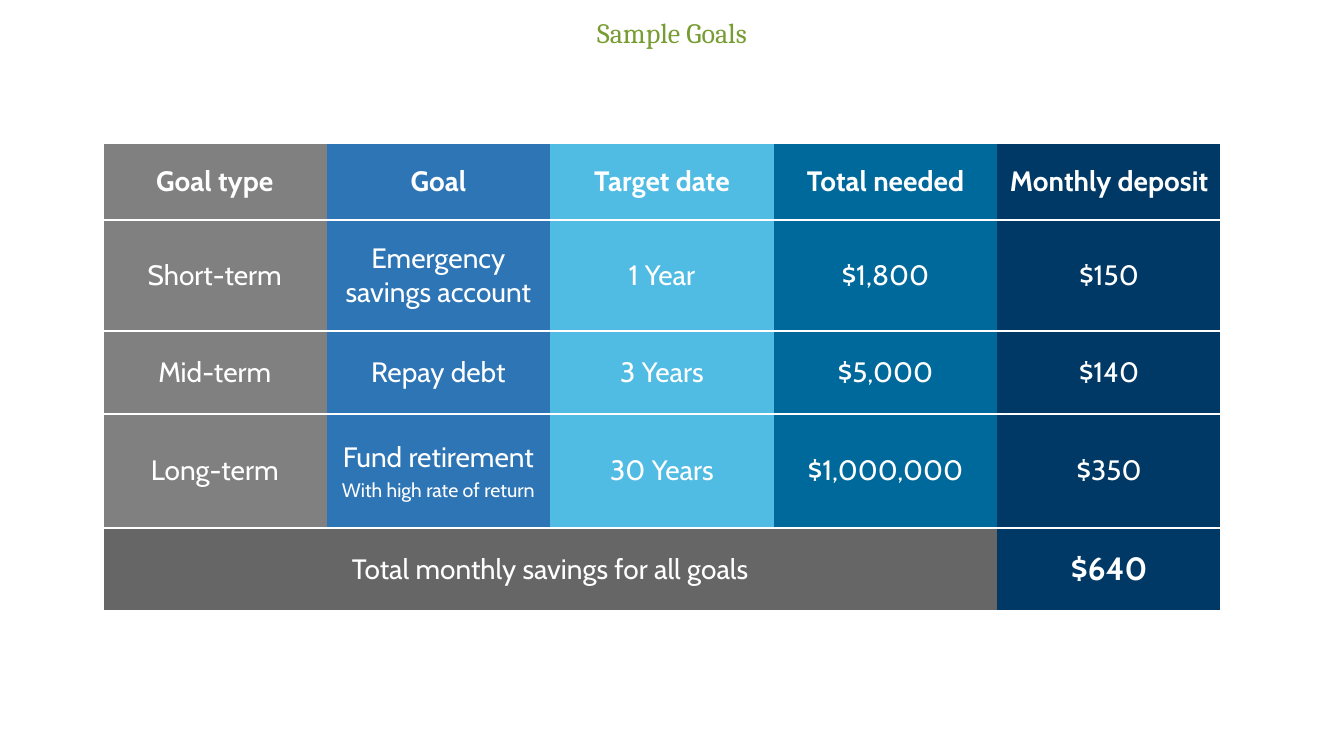
import lxml.etree
import pptx
import pptx.dml.color
import pptx.enum.text
import pptx.oxml.ns
import pptx.util

TITLE = "Sample Goals"
GOALS = [
    ["Goal type", "Goal", "Target date", "Total needed", "Monthly deposit"],
    ["Short-term", "Emergency savings account", "1 Year", "$1,800", "$150"],
    ["Mid-term", "Repay debt", "3 Years", "$5,000", "$140"],
    ["Long-term", "Fund retirement", "30 Years", "$1,000,000", "$350"],
    ["Total monthly savings for all goals", "", "", "", "$640"],
]
NOTES = {"Fund retirement": "With high rate of return"}

THEME = {
    "title_font": "Cambria", "table_font": "Cabin",
    "title": "779C31", "text": "FFFFFF", "rule": "FFFFFF", "total": "666666",
    "columns": ["808080", "2E75B6", "50BCE3", "00699B", "003965"],
    "body_size": 20, "note_size": 14, "sum_size": 23, "rule_width": 1,
}

SLIDE_SIZE = (1344, 756)
TITLE_BOX = (0, 21, 1344, 27)
TABLE_LEFT, TABLE_TOP, TABLE_WIDTH = 103, 143, 1118
ROW_HEIGHTS = [77, 111, 83, 114, 83]
CELL_INSETS, TOTAL_INSETS = (11, 6), (14, 7)


def px(length):
    return pptx.util.Emu(round(length * 914400 / 100.8))


def color(code):
    return pptx.dml.color.RGBColor.from_string(code)


def write(paragraph, text, font, size, ink, bold=False):
    paragraph.alignment = pptx.enum.text.PP_ALIGN.CENTER
    run = paragraph.add_run()
    run.text = text
    run.font.name = font
    run.font.size = pptx.util.Pt(size)
    run.font.bold = bold
    run.font.color.rgb = color(ink)


def space_by_percent(paragraph, percent):
    qn = pptx.oxml.ns.qn
    before = lxml.etree.SubElement(paragraph._p.get_or_add_pPr(), qn("a:spcBef"))
    lxml.etree.SubElement(before, qn("a:spcPct"), val=str(percent * 1000))


def rule_cell(cell, ruled_sides):
    qn = pptx.oxml.ns.qn
    properties = cell._tc.get_or_add_tcPr()
    for place, side in enumerate("LRTB"):
        width = pptx.util.Pt(THEME["rule_width"]) if side in ruled_sides else 0
        rule = lxml.etree.Element(qn(f"a:ln{side}"), w=str(int(width)))
        if side in ruled_sides:
            fill = lxml.etree.SubElement(rule, qn("a:solidFill"))
            lxml.etree.SubElement(fill, qn("a:srgbClr"), val=THEME["rule"])
        else:
            lxml.etree.SubElement(rule, qn("a:noFill"))
        properties.insert(place, rule)


def add_title(slide):
    frame = slide.shapes.add_textbox(*map(px, TITLE_BOX)).text_frame
    frame.word_wrap = True
    frame.margin_left = frame.margin_right = frame.margin_top = frame.margin_bottom = 0
    frame.vertical_anchor = pptx.enum.text.MSO_ANCHOR.MIDDLE
    heading = frame.paragraphs[0]
    heading.line_spacing = 0.9
    heading.space_before = pptx.util.Pt(9.7)
    write(heading, TITLE, THEME["title_font"], THEME["body_size"], THEME["title"])


def add_goals(slide):
    last_row, last_column = len(GOALS) - 1, len(GOALS[0]) - 1
    goals = slide.shapes.add_table(
        len(GOALS), len(GOALS[0]), px(TABLE_LEFT), px(TABLE_TOP),
        px(TABLE_WIDTH), px(sum(ROW_HEIGHTS))).table
    goals.first_row = goals.horz_banding = False
    for column in goals.columns:
        column.width = px(TABLE_WIDTH / len(GOALS[0]))
    for row, height in zip(goals.rows, ROW_HEIGHTS):
        row.height = px(height)
    goals.cell(last_row, 0).merge(goals.cell(last_row, last_column - 1))

    for r, entries in enumerate(GOALS):
        for c, entry in enumerate(entries):
            cell = goals.cell(r, c)
            is_total = r == last_row and c < last_column
            is_sum = r == last_row and c == last_column
            cell.fill.solid()
            cell.fill.fore_color.rgb = color(THEME["total"] if is_total else THEME["columns"][c])
            rule_cell(cell, "TB" + "L" * (c == 0) + "R" * (c == last_column))
            if not entry:
                continue
            across, down = TOTAL_INSETS if is_total else CELL_INSETS
            cell.margin_left = cell.margin_right = px(across)
            cell.margin_top = cell.margin_bottom = px(down)
            cell.vertical_anchor = pptx.enum.text.MSO_ANCHOR.MIDDLE
            lines = [(entry, THEME["sum_size"] if is_sum else THEME["body_size"])]
            if entry in NOTES:
                lines.append((NOTES[entry], THEME["note_size"]))
            for i, (text, size) in enumerate(lines):
                paragraph = cell.text_frame.add_paragraph() if i else cell.text_frame.paragraphs[0]
                space_by_percent(paragraph, 20)
                write(paragraph, text, THEME["table_font"], size, THEME["text"],
                      bold=r == 0 or is_sum)


def main():
    deck = pptx.Presentation()
    deck.slide_width, deck.slide_height = map(px, SLIDE_SIZE)
    slide = deck.slides.add_slide(deck.slide_layouts[6])
    add_title(slide)
    add_goals(slide)
    deck.save("out.pptx")


if __name__ == "__main__":
    main()
